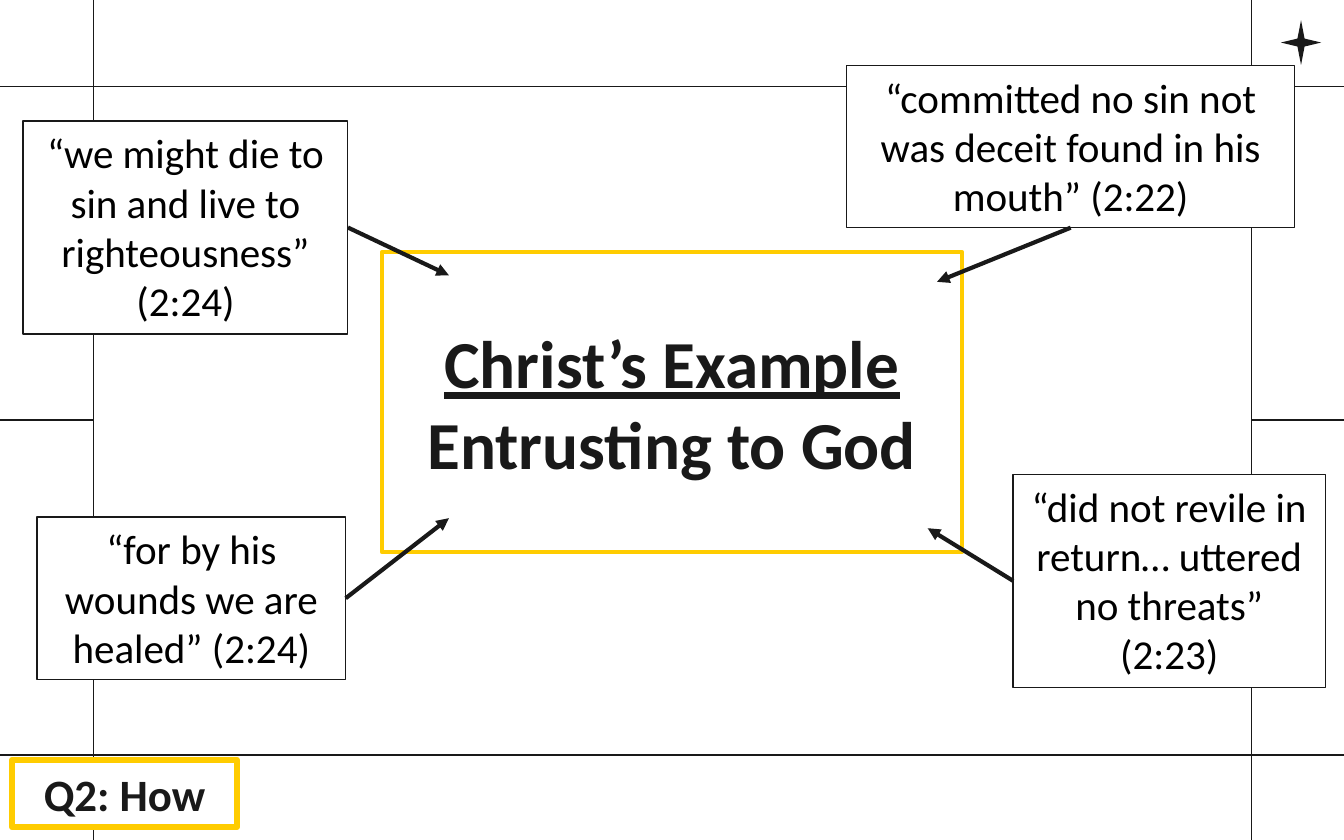
from dataclasses import dataclass

from lxml.etree import SubElement
from pptx import Presentation
from pptx.dml.color import RGBColor
from pptx.enum.shapes import MSO_CONNECTOR, MSO_SHAPE
from pptx.enum.text import MSO_ANCHOR, MSO_AUTO_SIZE, PP_ALIGN
from pptx.oxml.ns import qn
from pptx.shapes.autoshape import Shape
from pptx.shapes.connector import Connector
from pptx.slide import Slide
from pptx.util import Pt

INK = RGBColor(0x19, 0x19, 0x19)
BLACK = RGBColor(0x00, 0x00, 0x00)
WHITE = RGBColor(0xFF, 0xFF, 0xFF)
GOLD = RGBColor(0xFF, 0xCC, 0x00)
FONT = "Calibri"

WIDTH, HEIGHT = 720, 450
LEFT_GUIDE, RIGHT_GUIDE = 50.2, 670.3
TOP_GUIDE, MIDDLE_GUIDE, BOTTOM_GUIDE = 46.2, 225, 404.5
BOTTOM_SIDE, LEFT_SIDE, RIGHT_SIDE = 2, 1, 3


@dataclass(frozen=True)
class Box:
    left: float
    top: float
    width: float
    height: float


@dataclass(frozen=True)
class Quote:
    text: str
    box: Box
    side: int
    target: tuple[float, float]


GUIDES = [
    (LEFT_GUIDE, 0, LEFT_GUIDE, HEIGHT),
    (RIGHT_GUIDE, 0, RIGHT_GUIDE, HEIGHT),
    (0, TOP_GUIDE, WIDTH, TOP_GUIDE),
    (0, MIDDLE_GUIDE, LEFT_GUIDE, MIDDLE_GUIDE),
    (RIGHT_GUIDE, MIDDLE_GUIDE, WIDTH, MIDDLE_GUIDE),
    (0, BOTTOM_GUIDE, WIDTH, BOTTOM_GUIDE),
]

QUOTES = [
    Quote("“did not revile in return… uttered no threats” (2:23)",
          Box(542.8, 254.2, 167.2, 114), LEFT_SIDE, (497, 283)),
    Quote("“committed no sin not was deceit found in his mouth” (2:22)",
          Box(453.6, 35, 240, 87), BOTTOM_SIDE, (502, 151)),
    Quote("“we might die to sin and live to righteousness” (2:24)",
          Box(12.4, 64.9, 174, 114), RIGHT_SIDE, (240.5, 147.5)),
    Quote("“for by his wounds we are healed” (2:24)",
          Box(19.8, 277, 165.4, 87), RIGHT_SIDE, (240.5, 277.6)),
]


def write_text(shape: Shape, text: str, *, size: float, color: RGBColor = INK,
               bold: bool = False, underlined_lines: int = 0,
               anchor: MSO_ANCHOR = MSO_ANCHOR.MIDDLE,
               auto_size: MSO_AUTO_SIZE = MSO_AUTO_SIZE.NONE) -> None:
    frame = shape.text_frame
    frame.text = text
    frame.word_wrap = True
    frame.auto_size = auto_size
    frame.vertical_anchor = anchor
    for index, paragraph in enumerate(frame.paragraphs):
        paragraph.alignment = PP_ALIGN.CENTER
        paragraph.line_spacing = 1.0
        for run in paragraph.runs:
            run.font.name = FONT
            run.font.size = Pt(size)
            run.font.bold = bold
            run.font.underline = index < underlined_lines
            run.font.color.rgb = color


def paint(shape: Shape, line_color: RGBColor, line_width: float) -> None:
    shape.fill.solid()
    shape.fill.fore_color.rgb = WHITE
    shape.line.color.rgb = line_color
    shape.line.width = Pt(line_width)


def add_box(slide: Slide, box: Box, line_color: RGBColor, line_width: float) -> Shape:
    shape = slide.shapes.add_shape(MSO_SHAPE.RECTANGLE, Pt(box.left), Pt(box.top),
                                   Pt(box.width), Pt(box.height))
    shape.shadow.inherit = False
    paint(shape, line_color, line_width)
    return shape


def add_line(slide: Slide, start_x: float, start_y: float, end_x: float, end_y: float,
             width: float = 0.75) -> Connector:
    connector = slide.shapes.add_connector(MSO_CONNECTOR.STRAIGHT, Pt(start_x), Pt(start_y),
                                           Pt(end_x), Pt(end_y))
    connector.line.color.rgb = INK
    connector.line.width = Pt(width)
    SubElement(connector._element.spPr, qn("a:effectLst"))
    return connector


def add_star(slide: Slide) -> None:
    star = slide.shapes.add_shape(MSO_SHAPE.STAR_4_POINT, Pt(686.2), Pt(10.8), Pt(21.6), Pt(24))
    star.adjustments[0] = 0.125
    star.shadow.inherit = False
    star.fill.solid()
    star.fill.fore_color.rgb = INK
    star.line.fill.background()


def format_title(slide: Slide) -> None:
    title = slide.shapes.title
    title.left, title.top = Pt(204.5), Pt(135)
    title.width, title.height = Pt(311), Pt(160.8)
    paint(title, GOLD, 2)
    write_text(title, "Christ’s Example\nEntrusting to God", size=36, bold=True,
               underlined_lines=1)


def add_quote(slide: Slide, quote: Quote) -> None:
    shape = add_box(slide, quote.box, INK, 0.75)
    write_text(shape, quote.text, size=22, color=BLACK, anchor=MSO_ANCHOR.TOP,
               auto_size=MSO_AUTO_SIZE.SHAPE_TO_FIT_TEXT)
    arrow = add_line(slide, quote.box.left, quote.box.top, *quote.target, width=2.25)
    arrow.begin_connect(shape, quote.side)
    SubElement(arrow.line._get_or_add_ln(), qn("a:tailEnd"), type="triangle")


def main() -> None:
    presentation = Presentation()
    presentation.slide_width, presentation.slide_height = Pt(WIDTH), Pt(HEIGHT)
    slide = presentation.slides.add_slide(presentation.slide_layouts[5])
    format_title(slide)
    for guide in GUIDES:
        add_line(slide, *guide)
    add_star(slide)
    for quote in QUOTES:
        add_quote(slide, quote)
    question = add_box(slide, Box(6.4, 407, 120.6, 36.2), GOLD, 3)
    write_text(question, "Q2: How", size=24, bold=True)
    presentation.save("out.pptx")


if __name__ == "__main__":
    main()
